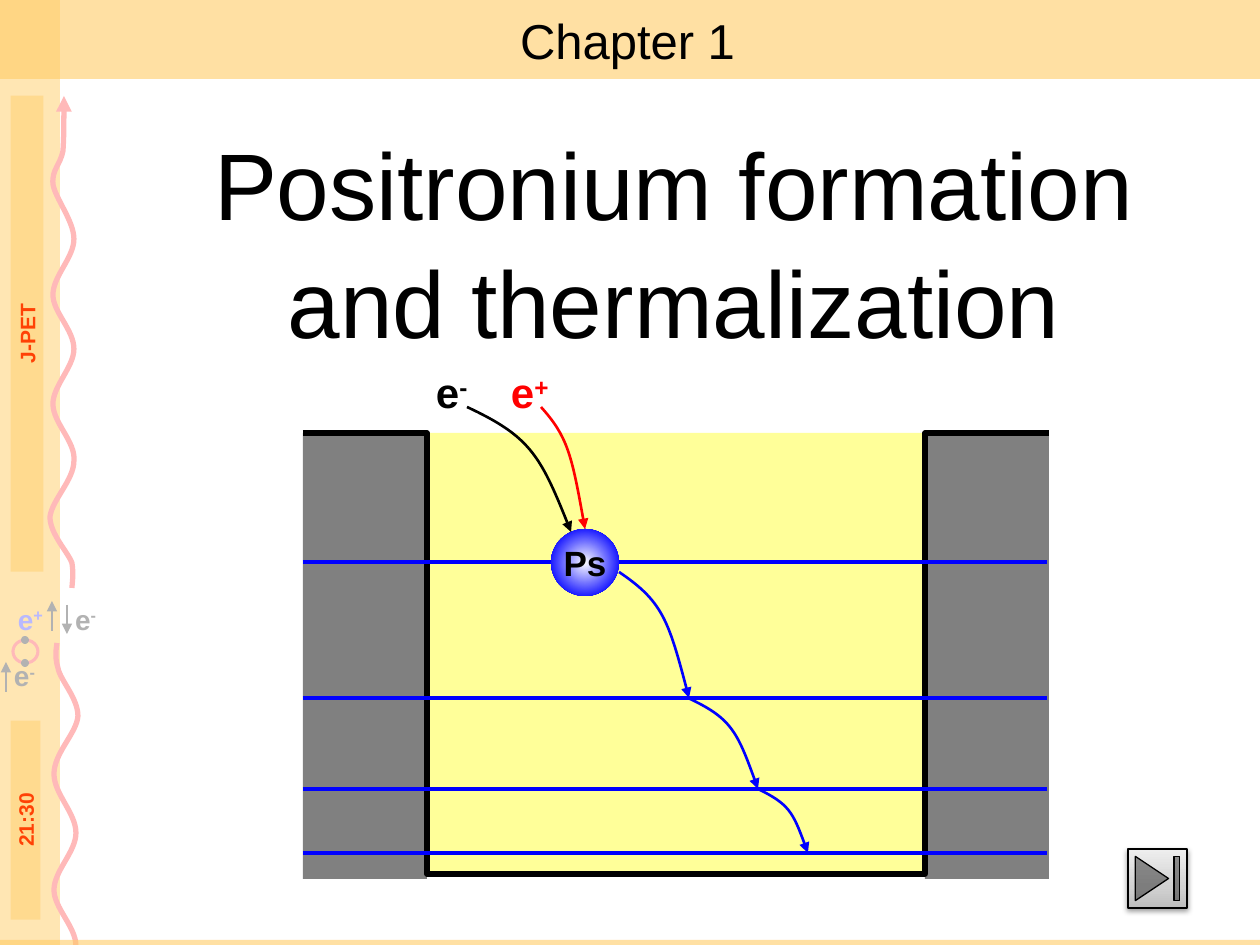
from pptx import Presentation
from pptx.dml.color import RGBColor
from pptx.enum.shapes import MSO_CONNECTOR, MSO_SHAPE
from pptx.enum.text import MSO_ANCHOR, MSO_AUTO_SIZE, PP_ALIGN
from pptx.oxml import parse_xml
from pptx.oxml.ns import nsdecls, qn
from pptx.oxml.xmlchemy import OxmlElement
from pptx.util import Emu, Pt

RECT, OVAL, END_BUTTON = MSO_SHAPE.RECTANGLE, MSO_SHAPE.OVAL, MSO_SHAPE.ACTION_BUTTON_END
STRAIGHT = MSO_CONNECTOR.STRAIGHT
CENTER, LEFT = PP_ALIGN.CENTER, PP_ALIGN.LEFT
MIDDLE, TOP = MSO_ANCHOR.MIDDLE, MSO_ANCHOR.TOP
NO_FIT = MSO_AUTO_SIZE.NONE
EMU_PER_PX = 914400 / 126
FONT = "Arial"
COLORS = {
    "side": "FFE6B3", "band": "FFCC66", "label": "FFDA8F", "label_text": "FF4105",
    "wave": "FFB9B9", "pale_blue": "B9B9FF", "pale_gray": "B2B2B2", "wall": "808080",
    "well": "FFFF99", "blue": "0000FF", "red": "FF0000", "black": "000000", "white": "FFFFFF",
    "button_dark": "BDBDBD", "button_mid": "D1D1D1", "button_light": "EEEEEE",
}
LOWER_WAVE = [
    (57, 643), (57, 646), (54, 655), (58, 668), (60, 680), (78, 698), (78, 716),
    (77, 733), (54, 753), (54, 774), (54, 794), (76, 813), (76, 833),
    (76, 852), (54, 871), (54, 890), (54, 908), (76, 927), (76, 946),
]
UPPER_WAVE = [
    (72, 588), (72, 584), (74, 575), (72, 563), (68, 552), (50, 534), (50, 517),
    (52, 500), (74, 480), (74, 461), (76, 442), (53, 423), (53, 404),
    (53, 386), (74, 367), (74, 349), (74, 330), (53, 312), (53, 295),
    (53, 276), (74, 258), (74, 239), (74, 221), (55, 198), (53, 184),
    (52, 169), (60, 166), (63, 151), (64, 137), (64, 108), (64, 96),
]
WELL = [(303, 433), (427, 433), (427, 874), (925, 874), (925, 433), (1049, 433)]
LEVELS = [853, 789, 698, 562]
PATHS = [
    ("red", [(541, 407), (567, 436), (572, 455), (585, 529)]),
    ("black", [(467, 407), (529, 436), (541, 456), (571, 532)]),
    ("blue", [(619, 572), (662, 601), (669, 621), (689, 698)]),
    ("blue", [(688, 698), (731, 718), (738, 733), (758, 789)]),
    ("blue", [(758, 789), (789, 804), (794, 814), (808, 853)]),
]


def px(n):
    """Turn pixels into EMU."""
    return Emu(round(n * EMU_PER_PX))


def rgb(name):
    """Look up a named colour."""
    return RGBColor.from_string(COLORS[name])


def set_line(sp, color, width, arrow=False):
    """Give an outline its colour, width and optional arrowhead."""
    sp.line.color.rgb = rgb(color)
    sp.line.width = Pt(width)
    if arrow:
        tail = OxmlElement("a:tailEnd")
        tail.set("type", "triangle")
        sp.line._get_or_add_ln().append(tail)


def add_block(s, shape, box, fill=None, alpha=None):
    """Add a preset shape without shadow or outline."""
    sp = s.shapes.add_shape(shape, *map(px, box))
    sp.shadow.inherit = False
    sp.line.fill.background()
    if fill:
        sp.fill.solid()
        sp.fill.fore_color.rgb = rgb(fill)
    else:
        sp.fill.background()
    if alpha:
        node = OxmlElement("a:alpha")
        node.set("val", str(alpha * 1000))
        sp.element.spPr.find(qn("a:solidFill"))[0].append(node)
    return sp


def set_gradient(sp, stops, direction):
    """Replace an empty fill with gradient stops."""
    gs = "".join(f'<a:gs pos="{pos * 1000}"><a:srgbClr val="{COLORS[c]}"/></a:gs>' for pos, c in stops)
    grad = parse_xml(f'<a:gradFill {nsdecls("a")}><a:gsLst>{gs}</a:gsLst>{direction}</a:gradFill>')
    spPr = sp.element.spPr
    spPr.replace(spPr.find(qn("a:noFill")), grad)


def write(sp, runs, size, color, bold=False, align=CENTER, anchor=MIDDLE, inset=None, wrap=True):
    """Write one paragraph; each run is a text and its superscript flag."""
    tf = sp.text_frame
    tf.auto_size = NO_FIT
    tf.word_wrap = wrap
    tf.vertical_anchor = anchor
    if inset is not None:
        tf.margin_left = tf.margin_top = tf.margin_right = tf.margin_bottom = inset
    p = tf.paragraphs[0]
    p.alignment = align
    for text, raised in runs:
        r = p.add_run()
        r.text = text
        r.font.name, r.font.size, r.font.bold = FONT, Pt(size), bold
        r.font.color.rgb = rgb(color)
        if raised:
            r.font._element.set("baseline", "30000")
    return p


def add_particle(s, box, sign, size, color):
    """Add an electron or positron symbol."""
    sp = s.shapes.add_textbox(*map(px, box))
    write(sp, [("e", False), (sign, True)], size, color, True, LEFT, TOP, 0, False)


def add_side_label(s, box, text):
    """Add a sidebar label that reads upwards."""
    sp = add_block(s, RECT, box, "label")
    sp.rotation = 270
    write(sp, [(text, False)], 12, "label_text", True)


def add_segment(s, start, end, color, width, arrow=False):
    """Add a straight line."""
    c = s.shapes.add_connector(STRAIGHT, *map(px, start + end))
    set_line(c, color, width, arrow)
    c.element.spPr.append(OxmlElement("a:effectLst"))


def add_outline(s, points, color, width, arrow=False, fill=None):
    """Add an open line through the points."""
    pts = [(px(x), px(y)) for x, y in points]
    builder = s.shapes.build_freeform(*pts[0])
    builder.add_line_segments(pts[1:], close=False)
    sp = builder.convert_to_shape()
    sp.shadow.inherit = False
    if fill:
        sp.fill.solid()
        sp.fill.fore_color.rgb = rgb(fill)
    else:
        sp.fill.background()
    set_line(sp, color, width, arrow)
    return sp


def add_curve(s, points, color, width, arrow=False):
    """Add a chain of cubic curves, three points to each."""
    sp = add_outline(s, points, color, width, arrow)
    track = next(sp.element.iter(qn("a:path")))
    steps = track.findall(qn("a:lnTo"))
    for i in range(0, len(steps), 3):
        cubic = OxmlElement("a:cubicBezTo")
        for step in steps[i:i + 3]:
            cubic.append(step[0])
            track.remove(step)
        track.append(cubic)


def add_sidebar(s):
    """Draw the sidebar with its decay waves and particles."""
    add_block(s, RECT, (0, 0, 60, 945), "side")
    add_curve(s, LOWER_WAVE, "wave", 3)
    add_curve(s, UPPER_WAVE, "wave", 3, True)
    set_line(add_block(s, OVAL, (13, 640, 25, 23)), "wave", 1.75)
    add_particle(s, (18, 602, 26, 34), "+", 16, "pale_blue")
    for x, y in [(14, 659), (75, 602)]:
        add_particle(s, (x, y, 21, 34), "-", 16, "pale_gray")
    for y in (636, 659):
        add_block(s, OVAL, (21, y, 8, 8), "pale_gray")
    for x, y1, y2 in [(52, 631, 601), (6, 692, 662), (67, 605, 634)]:
        add_segment(s, (x, y1), (x, y2), "pale_gray", 1, True)


def add_titles(s):
    """Place the chapter title and the heading."""
    title = s.shapes.title
    title.element.getparent().append(title.element)
    title.left, title.top, title.width, title.height = map(px, (32, 11, 1191, 58))
    write(title, [("Chapter 1", False)], 28, "black")
    heading = s.shapes.add_textbox(*map(px, (123, 135, 1101, 208)))
    p = write(heading, [("Positronium formation and thermalization", False)], 54, "black")
    p.line_spacing = 1.04
    p.space_before = Pt(7)


def add_end_button(s):
    """Add the shaded end button."""
    sp = add_block(s, END_BUTTON, (1128, 849, 59, 59))
    set_gradient(sp, [(0, "button_dark"), (35, "button_mid"), (100, "button_light")],
                 '<a:lin ang="16200000" scaled="1"/>')
    set_line(sp, "black", 0.75)
    sp.element.spPr.find(qn("a:effectLst")).append(parse_xml(
        f'<a:outerShdw {nsdecls("a")} blurRad="{Pt(3.1)}" dist="{Pt(1.6)}" dir="5400000" rotWithShape="0">'
        f'<a:srgbClr val="{COLORS["black"]}"><a:alpha val="38000"/></a:srgbClr></a:outerShdw>'))


def add_energy_well(s):
    """Draw the well, its levels and the positronium cascade."""
    for x in (303, 925):
        add_block(s, RECT, (x, 433, 124, 446), "wall")
    add_outline(s, WELL, "black", 3, fill="well")
    for y in LEVELS:
        add_segment(s, (303, y), (1047, y), "blue", 2.25)
    ps = add_block(s, OVAL, (551, 529, 68, 67))
    set_gradient(ps, [(0, "white"), (80, "blue")],
                 '<a:path path="circle"><a:fillToRect l="50000" t="50000" r="50000" b="50000"/></a:path>')
    write(ps, [("Ps", False)], 20, "black", True, inset=0)
    for x, sign, color in [(511, "+", "red"), (436, "-", "black")]:
        add_particle(s, (x, 367, 40, 51), sign, 24, color)
    for color, points in PATHS:
        add_curve(s, points, color, 1.5, True)


def main():
    """Build the slide."""
    prs = Presentation()
    prs.slide_width, prs.slide_height = px(1260), px(945)
    s = prs.slides.add_slide(prs.slide_layouts[5])
    add_sidebar(s)
    add_block(s, RECT, (0, 0, 1269, 79), "band", 60)
    add_block(s, RECT, (0, 940, 1266, 6), "band", 60)
    add_titles(s)
    add_side_label(s, (-211, 317, 476, 33), "J-PET")
    add_end_button(s)
    add_energy_well(s)
    add_side_label(s, (-74, 805, 199, 30), "21:30")
    prs.save("out.pptx")


if __name__ == "__main__":
    main()
